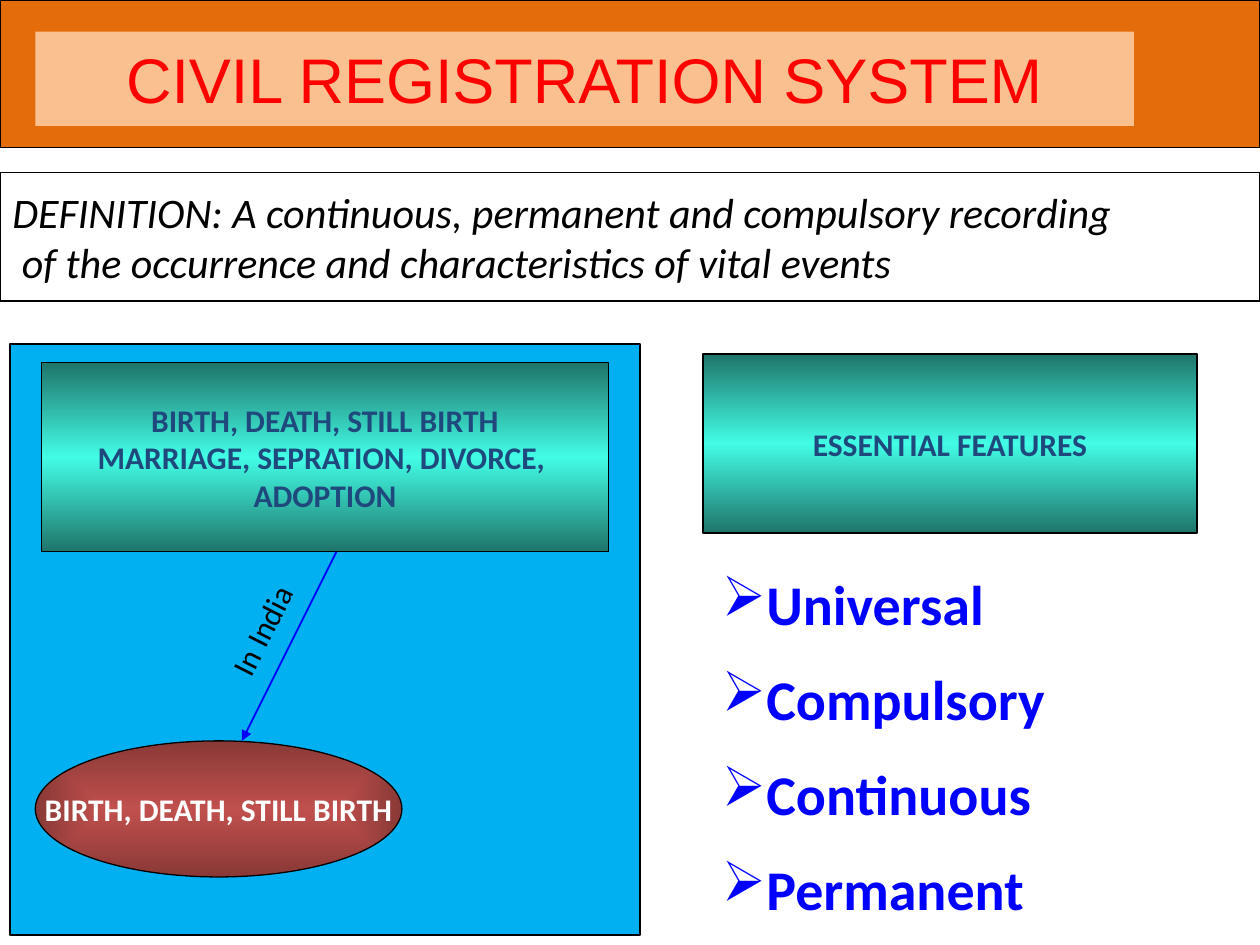
"""Build the civil registration system slide."""
from dataclasses import dataclass
from typing import Optional

from lxml import etree
from pptx import Presentation
from pptx.dml.color import RGBColor
from pptx.enum.shapes import MSO_CONNECTOR, MSO_SHAPE
from pptx.enum.text import MSO_ANCHOR, PP_ALIGN
from pptx.oxml import parse_xml
from pptx.oxml.ns import nsdecls, qn
from pptx.util import Inches, Pt

RECT, OVAL = MSO_SHAPE.RECTANGLE, MSO_SHAPE.OVAL
STRAIGHT = MSO_CONNECTOR.STRAIGHT
MIDDLE, TOP = MSO_ANCHOR.MIDDLE, MSO_ANCHOR.TOP
CENTER, JUSTIFY, LEFT = PP_ALIGN.CENTER, PP_ALIGN.JUSTIFY, PP_ALIGN.LEFT

COLORS = {
    "orange": "E46C0A", "peach": "FAC090", "sky": "00B0F0", "red": "FF0000",
    "black": "000000", "white": "FFFFFF", "navy": "1F497D", "blue": "0000FF",
    "teal": "1F756A", "aqua": "42FCE6", "rose": "C0504D", "maroon": "893937",
}
TEAL_BAND = (("teal", 0), ("aqua", 50), ("teal", 100))
ROSE_GLOW = (("rose", 0), ("maroon", 100))
LINEAR = '<a:lin ang="5400000" scaled="0"/>'
GLOW = ('<a:path path="shape"><a:fillToRect l="50000" t="50000" '
        'r="50000" b="50000"/></a:path>')
HEADING = {"size": Pt(18), "bold": True}


@dataclass
class Panel:
    """A bordered shape with an optional fill and text."""
    box: tuple
    fill: Optional[str] = None
    stops: tuple = ()
    shade: str = LINEAR
    kind: int = RECT
    lines: tuple = ()
    color: str = "black"
    font: Optional[dict] = None
    align: int = CENTER


BACKDROPS = (
    Panel((0, 0, 10, 1.17), fill="orange"),
    Panel((0.08, 2.73, 5, 4.69), fill="sky"),
)
PANELS = (
    Panel((0.33, 2.88, 4.5, 1.5), stops=TEAL_BAND, color="navy", font=HEADING,
          lines=("BIRTH, DEATH, STILL BIRTH",
                 "MARRIAGE, SEPRATION, DIVORCE, ", "ADOPTION")),
    Panel((0.28, 5.88, 2.91, 1.08), stops=ROSE_GLOW, shade=GLOW, kind=OVAL,
          lines=("BIRTH, DEATH, STILL BIRTH",), color="white", font=HEADING),
    Panel((5.58, 2.81, 3.92, 1.42), stops=TEAL_BAND, color="navy",
          font=HEADING, lines=("ESSENTIAL FEATURES",)),
    Panel((0, 1.37, 10, 1.02), align=JUSTIFY,
          font={"size": Pt(24), "italic": True},
          lines=("DEFINITION: A continuous, permanent and compulsory recording",
                 " of the occurrence and characteristics of vital events")),
)
FEATURES = ("Universal", "Compulsory", "Continuous", "Permanent")


def rgb(name: str) -> RGBColor:
    """Return a named colour."""
    return RGBColor.from_string(COLORS[name])


def inches(box: tuple) -> list:
    """Convert numbers to lengths."""
    return [Inches(v) for v in box]


def write(tf, lines: tuple, color: str, font: dict, align: int = CENTER,
          anchor: int = MIDDLE, wrap: bool = False) -> None:
    """Fill a text frame with one formatted paragraph per line."""
    tf.word_wrap, tf.vertical_anchor = wrap, anchor
    for i, line in enumerate(lines):
        p = tf.add_paragraph() if i else tf.paragraphs[0]
        p.alignment = align
        r = p.add_run()
        r.text = line
        r.font.color.rgb = rgb(color)
        for key, value in {"name": "Calibri", **font}.items():
            setattr(r.font, key, value)


def gradient(sp, stops: tuple, shade: str) -> None:
    """Give a shape a gradient fill."""
    marks = "".join(
        f'<a:gs pos="{pos * 1000}"><a:srgbClr val="{COLORS[name]}"/></a:gs>'
        for name, pos in stops)
    fill = parse_xml(f'<a:gradFill {nsdecls("a")} rotWithShape="1">'
                     f'<a:gsLst>{marks}</a:gsLst>{shade}</a:gradFill>')
    sp.element.spPr.find(qn("a:prstGeom")).addnext(fill)


def draw_panel(s, panel: Panel) -> None:
    """Draw one panel."""
    sp = s.shapes.add_shape(panel.kind, *inches(panel.box))
    sp.shadow.inherit = False
    sp.line.color.rgb, sp.line.width = rgb("black"), Pt(0.75)
    if panel.stops:
        gradient(sp, panel.stops, panel.shade)
    elif panel.fill:
        sp.fill.solid()
        sp.fill.fore_color.rgb = rgb(panel.fill)
    else:
        sp.fill.background()
    if panel.lines:
        write(sp.text_frame, panel.lines, panel.color, panel.font, panel.align)


def draw_title(s, text: str) -> None:
    """Place the title above the backdrops."""
    sp = s.shapes.title
    sp.left, sp.top, sp.width, sp.height = inches((0.28, 0.25, 8.72, 0.75))
    sp.fill.solid()
    sp.fill.fore_color.rgb = rgb("peach")
    write(sp.text_frame, (text,), "red", {"name": "Arial", "size": Pt(36)},
          wrap=True)
    s.shapes.element.append(sp.element)


def draw_arrow(s, start: tuple, end: tuple) -> None:
    """Draw an arrow between two points."""
    c = s.shapes.add_connector(STRAIGHT, *inches(start + end))
    c.line.color.rgb, c.line.width = rgb("blue"), Pt(1)
    etree.SubElement(c.line._get_or_add_ln(), qn("a:tailEnd"), type="triangle")
    etree.SubElement(c.element.spPr, qn("a:effectLst"))


def draw_label(s, text: str) -> None:
    """Write the slanted label beside the arrow."""
    sp = s.shapes.add_textbox(*inches((1.59, 4.89, 0.97, 0.22)))
    sp.rotation = 296.9
    write(sp.text_frame, (text,), "black", {"size": Pt(18)})


def draw_features(s, items: tuple) -> None:
    """Write the bulleted list of features."""
    tf = s.shapes.add_textbox(*inches((5.63, 4.47, 3.58, 3.06))).text_frame
    write(tf, items, "blue", {"size": Pt(32), "bold": True}, LEFT, TOP, True)
    for p in tf.paragraphs:
        pPr = p._p.get_or_add_pPr()
        before = etree.SubElement(pPr, qn("a:spcBef"))
        etree.SubElement(before, qn("a:spcPct"), val="50000")
        etree.SubElement(pPr, qn("a:buChar"), char="➢")


def main() -> None:
    """Build and save the slide."""
    prs = Presentation()
    prs.slide_width, prs.slide_height = Inches(10), Inches(7.5)
    s = prs.slides.add_slide(prs.slide_layouts[5])
    for panel in BACKDROPS:
        draw_panel(s, panel)
    draw_title(s, "CIVIL REGISTRATION SYSTEM")
    for panel in PANELS:
        draw_panel(s, panel)
    draw_arrow(s, (2.67, 4.38), (1.92, 5.88))
    draw_label(s, "In India")
    draw_features(s, FEATURES)
    prs.save("out.pptx")


if __name__ == "__main__":
    main()
